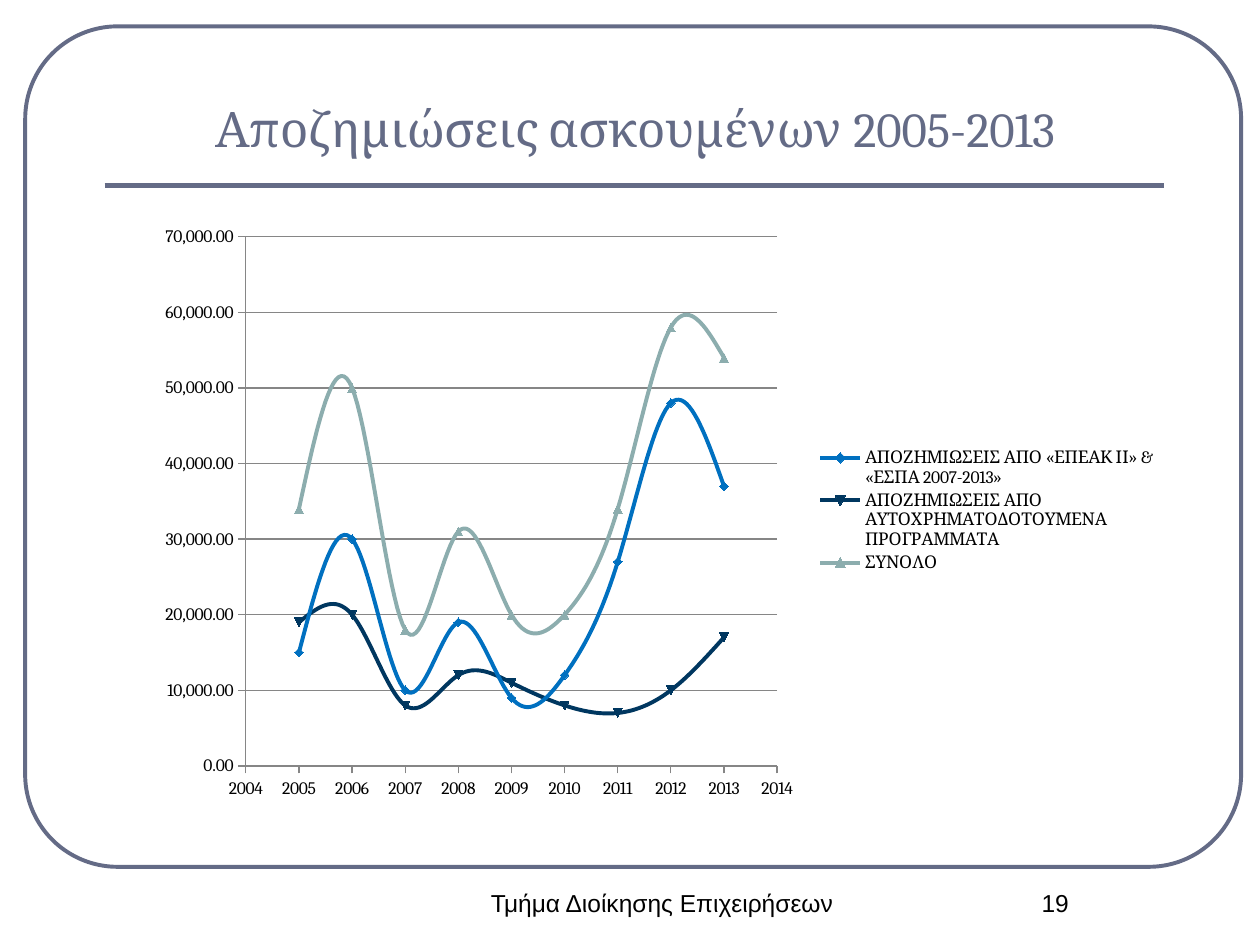
from lxml import etree
from pptx import Presentation
from pptx.chart.data import XyChartData
from pptx.dml.color import RGBColor
from pptx.enum.chart import XL_CHART_TYPE as ChartType, XL_LEGEND_POSITION as LegendPosition
from pptx.enum.chart import XL_MARKER_STYLE as Marker, XL_TICK_MARK as TickMark
from pptx.enum.shapes import MSO_CONNECTOR as Connector, MSO_SHAPE as Shape
from pptx.enum.text import MSO_ANCHOR as Anchor, PP_ALIGN as Align
from pptx.oxml import parse_xml
from pptx.oxml.ns import nsdecls, qn
from pptx.util import Inches, Pt

SLATE, BLACK, GRAY = "646B86", "000000", "868686"
YEARS = range(2005, 2014)
SERIES = [
    ("ΑΠΟΖΗΜΙΩΣΕΙΣ ΑΠΟ «ΕΠΕΑΚ ΙΙ» & «ΕΣΠΑ 2007-2013»", "0070C0", Marker.DIAMOND,
     [15000, 30000, 10000, 19000, 9000, 12000, 27000, 48000, 37000]),
    ("ΑΠΟΖΗΜΙΩΣΕΙΣ ΑΠΟ ΑΥΤΟΧΡΗΜΑΤΟΔΟΤΟΥΜΕΝΑ ΠΡΟΓΡΑΜΜΑΤΑ", "003760", Marker.AUTOMATIC,
     [19000, 20000, 8000, 12000, 11000, 8000, 7000, 10000, 17000]),
    ("ΣΥΝΟΛΟ", "8CADAE", Marker.TRIANGLE,
     [34000, 50000, 18000, 31000, 20000, 20000, 34000, 58000, 54000]),
]


def color(value):
    return RGBColor.from_string(value)


def style_line(line, value, width):
    line.color.rgb = color(value)
    line.width = Pt(width)


def add_frame(slide, left, top, width, height):
    shape = slide.shapes.add_shape(Shape.ROUNDED_RECTANGLE, Inches(left), Inches(top),
                                   Inches(width), Inches(height))
    shape.adjustments[0] = 0.11
    shape.shadow.inherit = False
    shape.fill.background()
    style_line(shape.line, SLATE, 2.25)


def add_rule(slide, left, right, y):
    rule = slide.shapes.add_connector(Connector.STRAIGHT, Inches(left), Inches(y),
                                      Inches(right), Inches(y))
    style_line(rule.line, SLATE, 3)
    etree.SubElement(rule._element.spPr, qn("a:effectLst"))


def add_text(slide, text, left, top, width, height, size, font, value, anchor=Anchor.TOP):
    box = slide.shapes.add_textbox(Inches(left), Inches(top), Inches(width), Inches(height))
    text_frame = box.text_frame
    text_frame.word_wrap = True
    text_frame.vertical_anchor = anchor
    text_frame.text = text
    paragraph = text_frame.paragraphs[0]
    paragraph.alignment = Align.CENTER
    run_font = paragraph.runs[0].font
    run_font.size, run_font.name = Pt(size), font
    run_font.color.rgb = color(value)


def layout_xml(left, top, width, height, inner=False):
    target = '<c:layoutTarget val="inner"/>' if inner else ""
    return parse_xml(
        f'<c:layout {nsdecls("c")}><c:manualLayout>{target}'
        '<c:xMode val="edge"/><c:yMode val="edge"/>'
        f'<c:x val="{left}"/><c:y val="{top}"/><c:w val="{width}"/><c:h val="{height}"/>'
        '</c:manualLayout></c:layout>')


def style_axis(axis, low, high, step, number_format):
    axis.minimum_scale, axis.maximum_scale, axis.major_unit = low, high, step
    axis.major_tick_mark, axis.minor_tick_mark = TickMark.OUTSIDE, TickMark.NONE
    axis.tick_labels.number_format = number_format
    axis.tick_labels.number_format_is_linked = False
    style_line(axis.format.line, GRAY, 0.75)


def smooth_series(series):
    element = series._element
    for smooth in element.findall(qn("c:smooth")):
        element.remove(smooth)
    element.find(qn("c:yVal")).addnext(parse_xml(f'<c:smooth {nsdecls("c")} val="1"/>'))


def style_series(series, value, marker):
    smooth_series(series)
    style_line(series.format.line, value, 2.25)
    series.marker.style = marker
    series.marker.size = 5
    series.marker.format.fill.solid()
    series.marker.format.fill.fore_color.rgb = color(value)
    style_line(series.marker.format.line, value, 0.75)


def add_scatter(slide, left, top, width, height):
    data = XyChartData(number_format="#,##0.00")
    for name, _, _, amounts in SERIES:
        points = data.add_series(name)
        for year, amount in zip(YEARS, amounts):
            points.add_data_point(year, amount)
    chart = slide.shapes.add_chart(ChartType.XY_SCATTER_SMOOTH, Inches(left), Inches(top),
                                   Inches(width), Inches(height), data).chart
    chart.has_title = False
    chart.font.size, chart.font.name = Pt(10), "Cambria"
    chart.font.color.rgb = color(BLACK)

    # Axes and gridlines
    style_axis(chart.category_axis, 2004, 2014, 1, "0")
    style_axis(chart.value_axis, 0, 70000, 10000, "#,##0.00")
    chart.category_axis.has_major_gridlines = False
    chart.value_axis.has_major_gridlines = True
    style_line(chart.value_axis.major_gridlines.format.line, GRAY, 0.75)

    # Curves
    chart.plots[0].vary_by_categories = False
    for series, (_, value, marker, _) in zip(chart.plots[0].series, SERIES):
        style_series(series, value, marker)

    # Plot area and legend placement
    chart.has_legend = True
    chart.legend.position = LegendPosition.RIGHT
    chart.legend.include_in_layout = False
    plot_area = chart._chartSpace.chart.plotArea
    for layout in plot_area.findall(qn("c:layout")):
        plot_area.remove(layout)
    plot_area.insert(0, layout_xml(0.1, 0.04, 0.52, 0.89, inner=True))
    legend = chart.legend._element
    for layout in legend.findall(qn("c:layout")):
        legend.remove(layout)
    legend.find(qn("c:legendPos")).addnext(layout_xml(0.66, 0.39, 0.33, 0.22))


def main():
    presentation = Presentation()
    presentation.slide_width, presentation.slide_height = Inches(10), Inches(7.5)
    slide = presentation.slides.add_slide(presentation.slide_layouts[6])

    # Frame and title
    add_frame(slide, 0.2, 0.21, 9.65, 6.67)
    add_rule(slide, 0.83, 9.24, 1.47)
    add_text(slide, "Αποζημιώσεις ασκουμένων 2005-2013", 0.83, 0.36, 8.42, 0.94,
             28, "Cambria", SLATE, Anchor.BOTTOM)

    # Footer
    add_text(slide, "Τμήμα Διοίκησης Επιχειρήσεων", 3.67, 7, 3.17, 0.5, 14, "Arial", BLACK)
    add_text(slide, "19", 7.5, 7, 1.75, 0.5, 14, "Arial", BLACK)

    add_scatter(slide, 1.14, 1.69, 8.11, 4.72)
    presentation.save("out.pptx")


if __name__ == "__main__":
    main()
